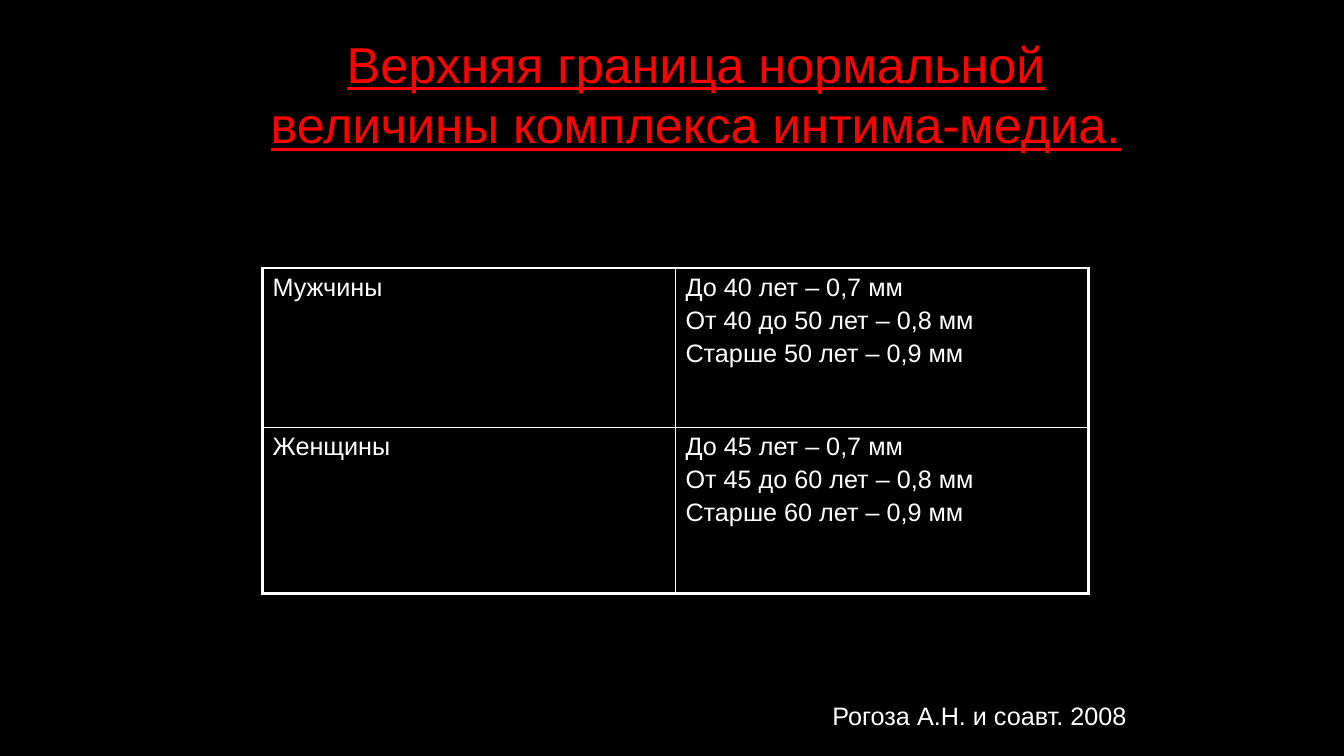
from lxml.etree import SubElement
from pptx import Presentation
from pptx.dml.color import RGBColor
from pptx.enum.text import MSO_AUTO_SIZE, PP_ALIGN
from pptx.oxml.ns import qn
from pptx.util import Pt

BLACK, WHITE, RED = "000000", "FFFFFF", "FF0000"
THICK, THIN = 2.25, 1
TITLE = "Верхняя граница нормальной величины комплекса интима-медиа."
SOURCE = "Рогоза А.Н. и соавт. 2008"
NORMS = [
    (["Мужчины"],
     ["До 40 лет – 0,7 мм", "От 40 до 50 лет – 0,8 мм", "Старше 50 лет – 0,9 мм"]),
    (["Женщины"],
     ["До 45 лет – 0,7 мм", "От 45 до 60 лет – 0,8 мм", "Старше 60 лет – 0,9 мм"]),
]


def color(value):
    return RGBColor.from_string(value)


def add_run(paragraph, text, size, text_color, underline=None):
    run = paragraph.add_run()
    run.text = text
    run.font.name = "Arial"
    run.font.size = Pt(size)
    run.font.color.rgb = color(text_color)
    run.font.underline = underline


def add_text_box(slide, box):
    text_box = slide.shapes.add_textbox(*map(Pt, box))
    frame = text_box.text_frame
    frame.word_wrap = True
    frame.auto_size = MSO_AUTO_SIZE.SHAPE_TO_FIT_TEXT
    return frame.paragraphs[0]


def add_title(slide, box):
    paragraph = add_text_box(slide, box)
    paragraph.alignment = PP_ALIGN.CENTER
    paragraph.space_before = Pt(18)
    add_run(paragraph, TITLE, 36, RED, underline=True)


def add_source(slide, box):
    add_run(add_text_box(slide, box), SOURCE, 18, WHITE)


def set_borders(cell, widths):
    properties = cell._tc.get_or_add_tcPr()
    # Border lines come before the fill in the cell properties
    for index, (side, width) in enumerate(widths.items()):
        line = SubElement(properties, qn(f"a:{side}"), w=str(Pt(width)))
        fill = SubElement(line, qn("a:solidFill"))
        SubElement(fill, qn("a:srgbClr"), val=WHITE)
        properties.insert(index, line)


def fill_cell(cell, lines):
    cell.fill.background()
    frame = cell.text_frame
    for index, text in enumerate(lines):
        paragraph = frame.add_paragraph() if index else frame.paragraphs[0]
        paragraph.space_before = Pt(3.6)
        add_run(paragraph, text, 18, WHITE)


def add_norms_table(slide, box, row_heights):
    last_row, last_column = len(NORMS) - 1, len(NORMS[0]) - 1
    table = slide.shapes.add_table(len(NORMS), len(NORMS[0]), *map(Pt, box)).table
    table.first_row = table.horz_banding = False
    for row, height in zip(table.rows, row_heights):
        row.height = Pt(height)
    for row, contents in enumerate(NORMS):
        for column, lines in enumerate(contents):
            cell = table.cell(row, column)
            fill_cell(cell, lines)
            # Thick outer frame, thin inner lines
            outer = {"lnL": column == 0, "lnR": column == last_column,
                     "lnT": row == 0, "lnB": row == last_row}
            set_borders(cell, {side: THICK if edge else THIN
                               for side, edge in outer.items()})


def build_slide(presentation):
    slide = presentation.slides.add_slide(presentation.slide_layouts[6])
    slide.background.fill.solid()
    slide.background.fill.fore_color.rgb = color(BLACK)
    add_source(slide, (587.5, 496.8, 252, 28.8))
    add_norms_table(slide, (187.5, 191.5, 590, 232.5), (113.75, 118.75))
    add_title(slide, (154, 20, 686, 93.6))


def main():
    presentation = Presentation()
    presentation.slide_width = Pt(960)
    presentation.slide_height = Pt(540)
    build_slide(presentation)
    presentation.save("out.pptx")


if __name__ == "__main__":
    main()
